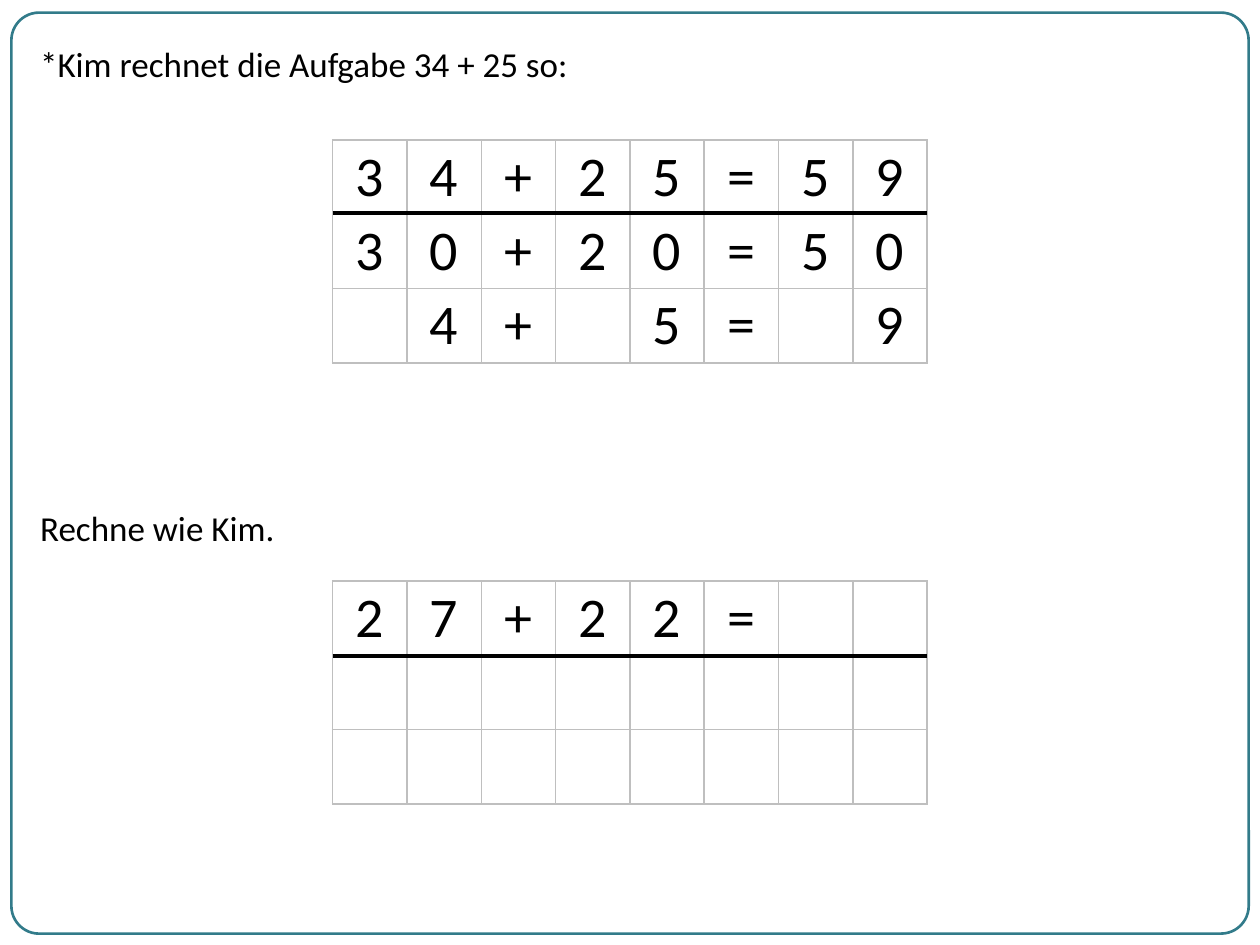
from pptx import Presentation
from pptx.dml.color import RGBColor
from pptx.enum.shapes import MSO_CONNECTOR as Link, MSO_SHAPE as Shape
from pptx.enum.text import MSO_ANCHOR as Anchor, MSO_AUTO_SIZE as Fit, PP_ALIGN as Align
from pptx.oxml import parse_xml
from pptx.oxml.ns import nsdecls, qn
from pptx.util import Inches, Pt
from lxml import etree

SIDE = 0.59  # edge of one square in the grids
LEFT = 2.64
BLACK, GREY, TEAL = "000000", "BFBFBF", "327B8A"


def color(code):
    return RGBColor.from_string(code)


def apply(obj, **values):
    for name, value in values.items():
        setattr(obj, name, value)


def write(para, text, size):
    run = para.add_run()
    run.text = text
    apply(run.font, name="Calibri", size=Pt(size))
    run.font.color.rgb = color(BLACK)


def style_line(line, code, width):
    line.color.rgb = color(code)
    line.width = Pt(width)


def add_frame(slide):
    frame = slide.shapes.add_shape(
        Shape.ROUNDED_RECTANGLE, Inches(0.09), Inches(0.1), Inches(9.82), Inches(7.31))
    frame.adjustments[0] = 0.03
    frame.shadow.inherit = False
    frame.fill.background()
    style_line(frame.line, TEAL, 1.5)


def add_label(slide, top, width, text):
    box = slide.shapes.add_textbox(Inches(0.22), Inches(top), Inches(width), Inches(0.44))
    apply(box.text_frame, word_wrap=True, auto_size=Fit.SHAPE_TO_FIT_TEXT)
    write(box.text_frame.paragraphs[0], text, 20)


def add_edges(cell):
    props = cell._tc.get_or_add_tcPr()
    for index, side in enumerate(("lnL", "lnR", "lnT", "lnB")):
        props.insert(index, parse_xml(
            f'<a:{side} {nsdecls("a")} w="{Pt(1)}"><a:solidFill>'
            f'<a:srgbClr val="{GREY}"/></a:solidFill></a:{side}>'))


def add_grid(slide, top, rows):
    count = len(rows[0])
    table = slide.shapes.add_table(
        len(rows), count, Inches(LEFT), Inches(top),
        Inches(SIDE * count), Inches(SIDE * len(rows))).table
    apply(table, first_row=False, horz_banding=False)
    for line in (*table.columns, ):
        line.width = Inches(SIDE)
    for row, text in zip(table.rows, rows):
        row.height = Inches(SIDE)
        for cell, sign in zip(row.cells, text):
            apply(cell, margin_left=0, margin_right=0, margin_top=0,
                  margin_bottom=0, vertical_anchor=Anchor.MIDDLE)
            cell.fill.background()
            add_edges(cell)
            para = cell.text_frame.paragraphs[0]
            para.alignment = Align.CENTER
            if sign.strip():
                write(para, sign, 32)


def add_rule(slide, top, count):
    rule = slide.shapes.add_connector(
        Link.STRAIGHT, Inches(LEFT), Inches(top), Inches(LEFT + SIDE * count), Inches(top))
    style_line(rule.line, BLACK, 2.25)
    etree.SubElement(rule._element.spPr, qn("a:effectLst"))


def main():
    deck = Presentation()
    apply(deck, slide_width=Inches(10), slide_height=Inches(7.5))
    slide = deck.slides.add_slide(deck.slide_layouts[6])

    add_frame(slide)

    # Worked sum and the sum to solve, one sign per square
    sums = (
        (1.11, 1.69, ("34+25=59", "30+20=50", " 4+ 5= 9")),
        (4.61, 5.21, ("27+22=  ", " " * 8, " " * 8)),
    )
    for top, _, rows in sums:
        add_grid(slide, top, rows)
    for _, top, rows in sums:
        add_rule(slide, top, len(rows[0]))

    # Instructions
    add_label(slide, 0.29, 7.16, "*Kim rechnet die Aufgabe 34 + 25 so:")
    add_label(slide, 3.97, 9.61, "Rechne wie Kim.")

    deck.save("out.pptx")


if __name__ == "__main__":
    main()
